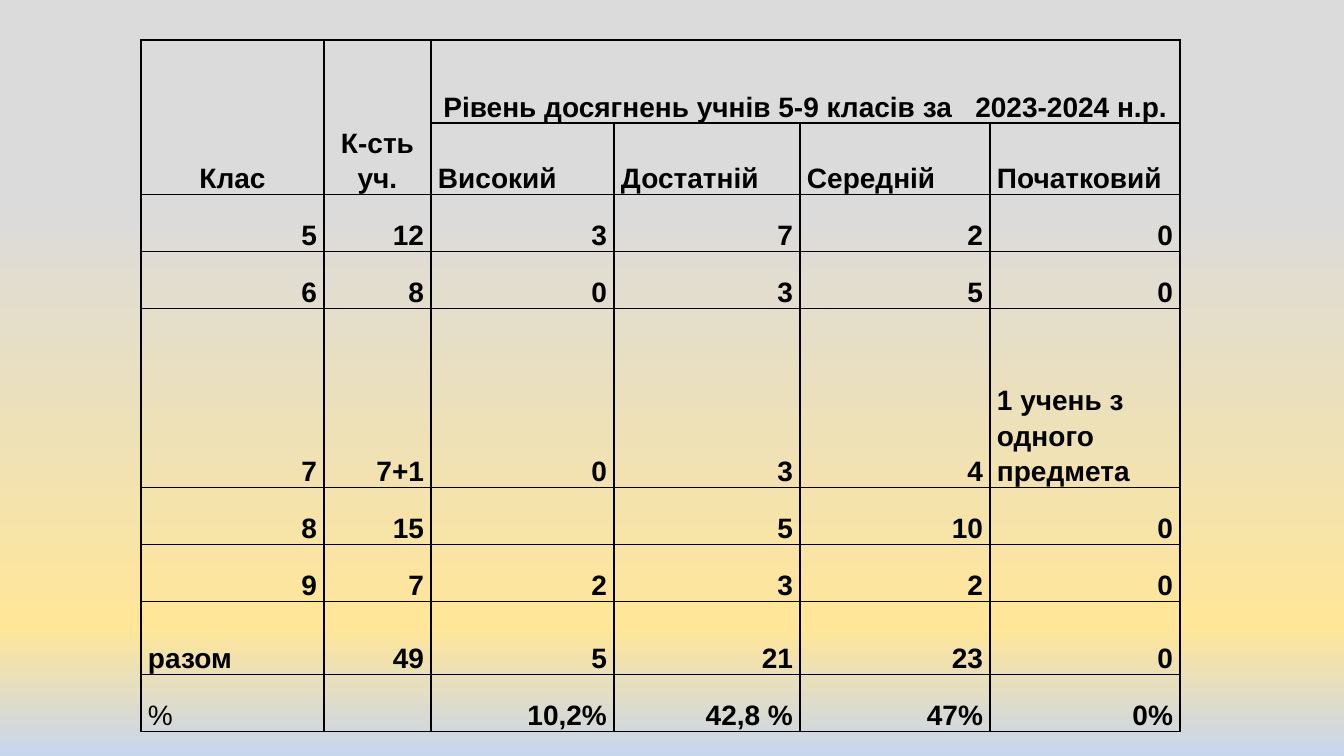
from copy import deepcopy

from lxml import etree
from pptx import Presentation
from pptx import util as u
from pptx.dml.color import RGBColor
from pptx.enum import text
from pptx.oxml.ns import qn

PX = 9071
COLORS = {"ink": "000000", "grey": "DBDBDB", "yellow": "FFE699", "blue": "C7D5ED"}
LEFT, RIGHT, CENTER = text.PP_ALIGN.LEFT, text.PP_ALIGN.RIGHT, text.PP_ALIGN.CENTER
WORDS = ("Високий", "Достатній", "Середній", "Початковий",
         "1 учень з одного предмета", "разом", "%")

COLUMNS = [183, 107, 183, 186, 190, 190]
HEIGHTS = [83, 57, 57, 57, 179, 57, 57, 73, 57]
ROWS = [
    ["Клас", "К-сть уч.", "Рівень досягнень учнів 5-9 класів за   2023-2024 н.р.", "", "", ""],
    ["", "", "Високий", "Достатній", "Середній", "Початковий"],
    ["5", "12", "3", "7", "2", "0"],
    ["6", "8", "0", "3", "5", "0"],
    ["7", "7+1", "0", "3", "4", "1 учень з одного предмета"],
    ["8", "15", "", "5", "10", "0"],
    ["9", "7", "2", "3", "2", "0"],
    ["разом", "49", "5", "21", "23", "0"],
    ["%", "", "10,2%", "42,8 %", "47%", "0%"],
]


def add_borders(cell):
    properties = cell._tc.get_or_add_tcPr()
    for side in ("lnL", "lnR", "lnT", "lnB"):
        line = etree.SubElement(properties, qn(f"a:{side}"), w=str(u.Pt(1)))
        fill = etree.SubElement(line, qn("a:solidFill"))
        etree.SubElement(fill, qn("a:srgbClr"), val=COLORS["ink"])


deck = Presentation()
deck.slide_width, deck.slide_height = 1344 * PX, 756 * PX
page = deck.slides.add_slide(deck.slide_layouts[6])

backdrop = page.background.fill
backdrop.gradient()
backdrop.gradient_angle = 270
stop_list = page.element.find(".//" + qn("a:gsLst"))
stop_list.append(deepcopy(stop_list[-1]))
stops = [(0.27, "grey"), (0.83, "yellow"), (1, "blue")]
for stop, (position, color) in zip(backdrop.gradient_stops, stops):
    stop.position = position
    stop.color.rgb = RGBColor.from_string(COLORS[color])

frame = page.shapes.add_table(len(ROWS), len(COLUMNS), 141 * PX, 40 * PX,
                              sum(COLUMNS) * PX, sum(HEIGHTS) * PX)
results = frame.table
results.first_row = results.horz_banding = False
for column, width in zip(results.columns, COLUMNS):
    column.width = width * PX
for row, height in zip(results.rows, HEIGHTS):
    row.height = height * PX

for r, values in enumerate(ROWS):
    for c, value in enumerate(values):
        cell = results.cell(r, c)
        add_borders(cell)
        cell.fill.background()
        cell.vertical_anchor = text.MSO_ANCHOR.BOTTOM
        cell.margin_left = cell.margin_right = 7 * PX
        cell.margin_top = cell.margin_bottom = 0
        cell.text = value
        para = cell.text_frame.paragraphs[0]
        para.alignment = CENTER if r == 0 else LEFT if value in WORDS else RIGHT
        para.line_spacing = 1.15
        para.space_after = u.Pt(10)
        para.font.name = "Arial"
        para.font.size = u.Pt(20)
        para.font.bold = value != "%"
        para.font.color.rgb = RGBColor.from_string(COLORS["ink"])

for first, last in [((0, 0), (1, 0)), ((0, 1), (1, 1)), ((0, 2), (0, 5))]:
    results.cell(*first).merge(results.cell(*last))

deck.save("out.pptx")
